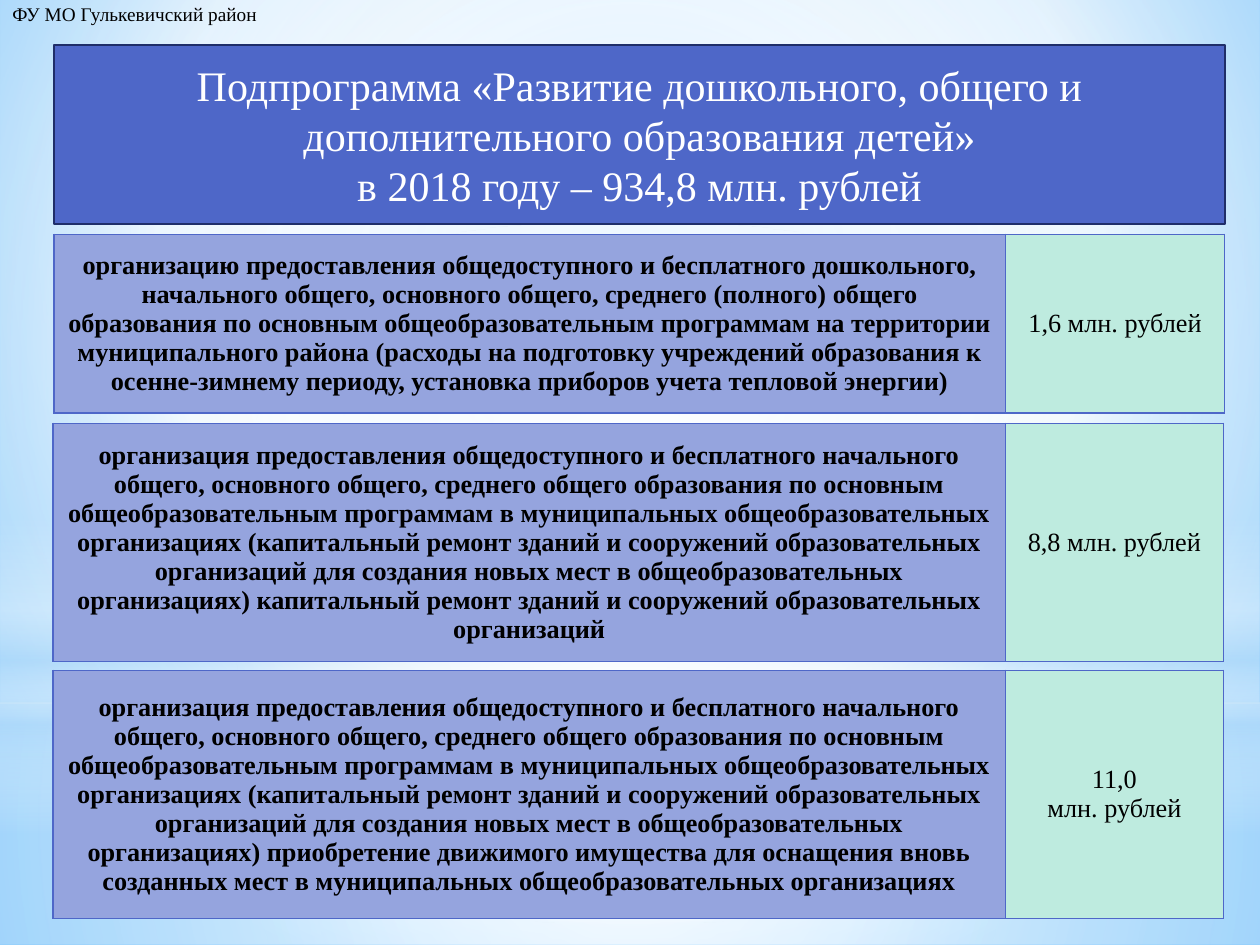
"""Build the slide on preschool, general and additional education spending in 2018."""
from lxml import etree
from pptx import Presentation
from pptx.dml.color import RGBColor
from pptx.enum.shapes import MSO_SHAPE
from pptx.enum.text import MSO_ANCHOR, MSO_AUTO_SIZE, PP_ALIGN
from pptx.oxml.ns import qn
from pptx.util import Inches, Pt

FONT = "Times New Roman"
COLORS = {
    "black": "000000",
    "white": "FFFFFF",
    "indigo": "4E67C8",
    "navy": "1F2E69",
    "lavender": "95A4DE",
    "mint": "BEEBDF",
    "mist": "B4DCFA",
    "sky": "9ED5FF",
    "azure": "5BB9FF",
}
CENTER = (50, 50, 50, 50)


def paint_gradient(properties, stops, focus):
    gradient = etree.Element(qn("a:gradFill"), rotWithShape="1")
    stop_list = etree.SubElement(gradient, qn("a:gsLst"))
    for position, color, opacity in stops:
        stop = etree.SubElement(stop_list, qn("a:gs"), pos=str(position * 1000))
        tint = etree.SubElement(stop, qn("a:srgbClr"), val=COLORS[color])
        if opacity < 100:
            etree.SubElement(tint, qn("a:alpha"), val=str(opacity * 1000))
    if focus:
        circle = etree.SubElement(gradient, qn("a:path"), path="circle")
        edges = {side: str(share * 1000) for side, share in zip("ltrb", focus)}
        etree.SubElement(circle, qn("a:fillToRect"), edges)
    else:
        etree.SubElement(gradient, qn("a:lin"), ang="5400000", scaled="0")
    properties.replace(properties.find(qn("a:solidFill")), gradient)


def write_lines(frame, lines, size, color, align, bold=False):
    for index, line in enumerate(lines):
        paragraph = frame.add_paragraph() if index else frame.paragraphs[0]
        paragraph.alignment = align
        run = paragraph.add_run()
        run.text = line
        run.font.name = FONT
        run.font.size = Pt(size)
        run.font.bold = bold
        run.font.color.rgb = RGBColor.from_string(COLORS[color])


presentation = Presentation()
presentation.slide_width = Inches(10)
presentation.slide_height = Inches(7.5)
slide = presentation.slides.add_slide(presentation.slide_layouts[5])

slide.background.fill.solid()
paint_gradient(
    slide.background._cSld.bg.bgPr,
    [(0, "sky", 100), (60, "white", 100), (100, "azure", 100)],
    (20, 10, 20, 60),
)

glows = [
    (MSO_SHAPE.RECTANGLE, 5.58, 1.92, CENTER,
     [(0, "white", 91), (37, "white", 76), (100, "mist", 79)]),
    (MSO_SHAPE.RECTANGLE, 0, 5.58, CENTER,
     [(0, "white", 89), (48, "white", 62), (100, "mist", 79)]),
    (MSO_SHAPE.RECTANGLE, 4.12, 2.5, None,
     [(0, "white", 0), (29, "white", 30), (45, "mist", 40),
      (55, "white", 26), (65, "mist", 60), (100, "white", 0)]),
    (MSO_SHAPE.OVAL, 1.75, 5.58, CENTER,
     [(0, "white", 100), (56, "white", 0)]),
]
for outline, top, height, focus, stops in glows:
    glow = slide.shapes.add_shape(outline, 0, Inches(top), Inches(10), Inches(height))
    glow.shadow.inherit = False
    glow.line.fill.background()
    glow.fill.solid()
    paint_gradient(glow._element.spPr, stops, focus)

department = slide.shapes.add_textbox(0, Inches(-0.03), Inches(2.18), Inches(0.29))
department.text_frame.word_wrap = False
department.text_frame.auto_size = MSO_AUTO_SIZE.SHAPE_TO_FIT_TEXT
write_lines(department.text_frame, ["ФУ МО Гулькевичский район"], 11, "black", PP_ALIGN.LEFT)

title = slide.shapes.title
slide.shapes._spTree.append(title._element)
title.left, title.top = Inches(0.43), Inches(0.36)
title.width, title.height = Inches(9.29), Inches(1.42)
rounding = etree.SubElement(title._element.spPr, qn("a:prstGeom"), prst="roundRect")
etree.SubElement(rounding, qn("a:avLst"))
title.fill.solid()
title.fill.fore_color.rgb = RGBColor.from_string(COLORS["indigo"])
title.line.color.rgb = RGBColor.from_string(COLORS["navy"])
title.line.width = Pt(1.25)
title.text_frame.word_wrap = True
title.text_frame.auto_size = MSO_AUTO_SIZE.NONE
title.text_frame.vertical_anchor = MSO_ANCHOR.MIDDLE
write_lines(
    title.text_frame,
    ["Подпрограмма «Развитие дошкольного, общего и дополнительного образования детей»",
     "в 2018 году – 934,8 млн. рублей"],
    24, "white", PP_ALIGN.CENTER,
)

new_places = (
    "организация предоставления общедоступного и бесплатного начального общего, "
    "основного общего, среднего общего образования по основным общеобразовательным "
    "программам в муниципальных общеобразовательных организациях (капитальный ремонт "
    "зданий и сооружений образовательных организаций для создания новых мест в "
    "общеобразовательных организациях) "
)
expenses = [
    (0.43, 1.86, 1.42, 7.55,
     "организацию предоставления общедоступного и бесплатного дошкольного, начального "
     "общего, основного общего, среднего (полного) общего образования по основным "
     "общеобразовательным программам на территории муниципального района (расходы на "
     "подготовку учреждений образования к осенне-зимнему периоду, установка приборов "
     "учета тепловой энергии)",
     ["1,6 млн. рублей"]),
    (0.42, 3.36, 1.89, 7.56,
     new_places + "капитальный ремонт зданий и сооружений образовательных организаций",
     ["8,8 млн. рублей"]),
    (0.42, 5.32, 1.97, 7.56,
     new_places + "приобретение движимого имущества для оснащения вновь созданных мест "
     "в муниципальных общеобразовательных организациях",
     ["11,0", "млн. рублей"]),
]
for left, top, height, purpose_width, purpose, amount in expenses:
    expense = slide.shapes.add_table(
        1, 2, Inches(left), Inches(top), Inches(9.29), Inches(height)
    ).table
    expense.first_row = False
    expense.horz_banding = False
    expense.columns[0].width = Inches(purpose_width)
    expense.columns[1].width = Inches(9.29 - purpose_width)
    for column, (lines, fill) in enumerate([([purpose], "lavender"), (amount, "mint")]):
        cell = expense.cell(0, column)
        cell.vertical_anchor = MSO_ANCHOR.MIDDLE
        cell.fill.solid()
        cell.fill.fore_color.rgb = RGBColor.from_string(COLORS[fill])
        write_lines(cell.text_frame, lines, 15, "black", PP_ALIGN.CENTER, bold=column == 0)
        cell_properties = cell._tc.get_or_add_tcPr()
        for position, side in enumerate("LRTB"):
            border = etree.Element(qn(f"a:ln{side}"), w=str(Pt(1)))
            border_fill = etree.SubElement(border, qn("a:solidFill"))
            etree.SubElement(border_fill, qn("a:srgbClr"), val=COLORS["indigo"])
            cell_properties.insert(position, border)

presentation.save("out.pptx")
